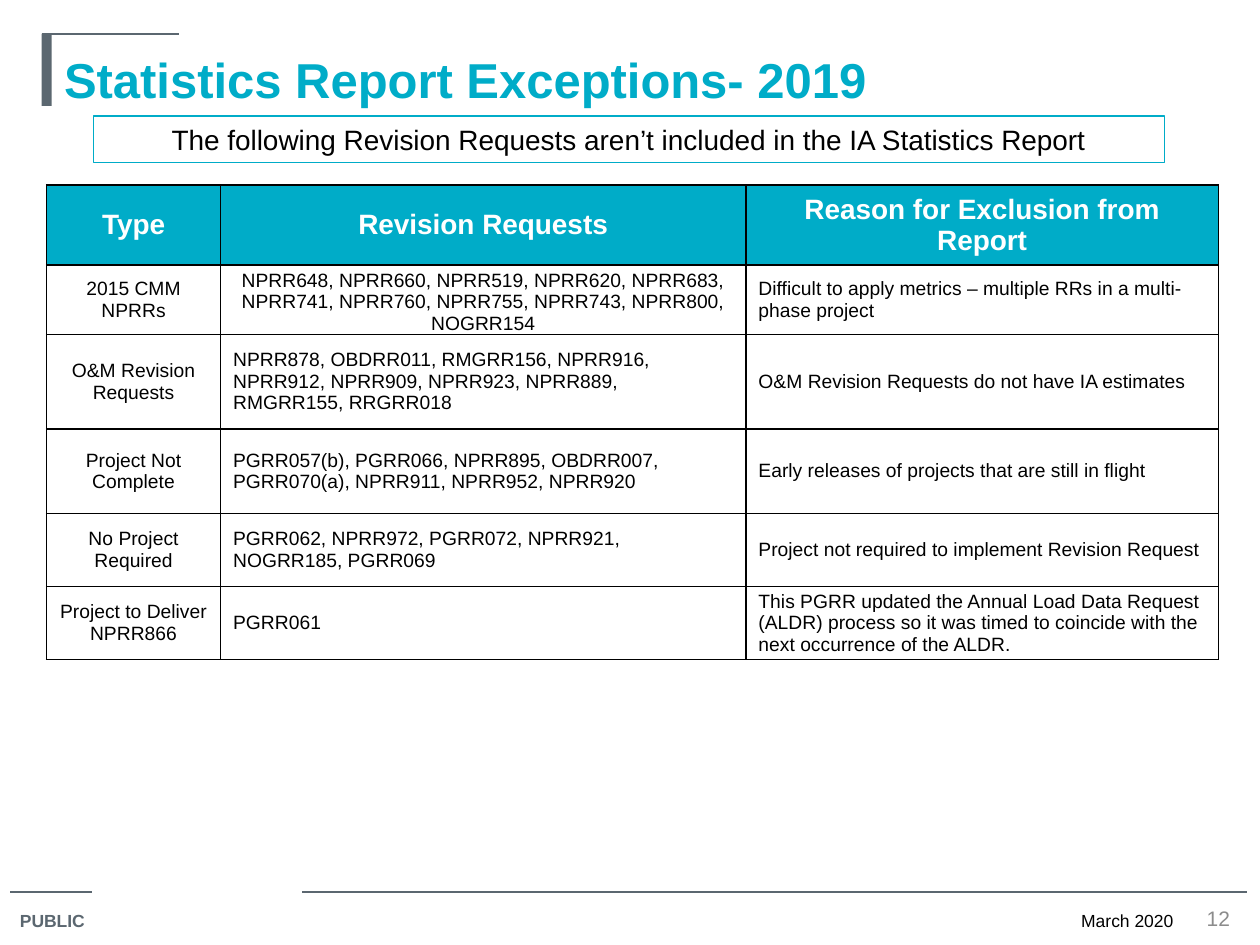
from lxml import etree
from pptx import Presentation
from pptx.dml.color import RGBColor
from pptx.enum.shapes import MSO_CONNECTOR, MSO_SHAPE
from pptx.enum.text import MSO_ANCHOR, PP_ALIGN
from pptx.oxml.ns import qn
from pptx.util import Inches, Pt

LEFT, CENTER, RIGHT = PP_ALIGN.LEFT, PP_ALIGN.CENTER, PP_ALIGN.RIGHT
TOP, MIDDLE, BOTTOM = MSO_ANCHOR.TOP, MSO_ANCHOR.MIDDLE, MSO_ANCHOR.BOTTOM
RECT, STRAIGHT = MSO_SHAPE.RECTANGLE, MSO_CONNECTOR.STRAIGHT

FONT = "Arial"
COLORS = {"teal": "00ACC8", "slate": "5B6770", "gray": "8C8C8C",
          "black": "000000", "white": "FFFFFF"}

# The slide is a grid of 100 columns by 75 rows with square units.
COLUMNS, ROWS = 100, 75
UNIT = Inches(10) / COLUMNS

TABLE_COLUMNS = [13.8, 41.7, 37.5]
TABLE_ROWS = [3.8, 6, 5.2, 7.5, 6.7, 5.8, 5.8]
HEADINGS = ["Type", "Revision Requests", "Reason for Exclusion from Report"]
EXCEPTIONS = [
    ["2015 CMM NPRRs",
     "NPRR648, NPRR660, NPRR519, NPRR620, NPRR683, NPRR741, NPRR760, "
     "NPRR755, NPRR743, NPRR800, NOGRR154",
     "Difficult to apply metrics – multiple RRs in a multi-phase project"],
    ["O&M Revision Requests",
     "NPRR878, OBDRR011, RMGRR156, NPRR916, NPRR912, NPRR909, NPRR923, "
     "NPRR889, RMGRR155, RRGRR018",
     "O&M Revision Requests do not have IA estimates"],
    ["Project Not Complete",
     "PGRR057(b), PGRR066, NPRR895, OBDRR007, PGRR070(a), NPRR911, "
     "NPRR952, NPRR920",
     "Early releases of projects that are still in flight"],
    ["No Project Required",
     "PGRR062, NPRR972, PGRR072, NPRR921, NOGRR185, PGRR069",
     "Project not required to implement Revision Request"],
    ["Project to Deliver NPRR866",
     "PGRR061",
     "This PGRR updated the Annual Load Data Request (ALDR) process so it "
     "was timed to coincide with the next occurrence of the ALDR."],
]


def grid(*units):
    return [round(u * UNIT) for u in units]


def rgb(name):
    return RGBColor.from_string(COLORS[name])


def write(tf, text, size, color, bold=False, align=LEFT, anchor=TOP):
    tf.text = text
    tf.word_wrap = True
    tf.vertical_anchor = anchor
    p = tf.paragraphs[0]
    p.alignment = align
    font = p.runs[0].font
    font.name, font.size, font.bold = FONT, Pt(size), bold
    font.color.rgb = rgb(color)


def add_text(slide, box, *args, **kwargs):
    write(slide.shapes.add_textbox(*grid(*box)).text_frame, *args, **kwargs)


def add_rule(slide, x, y, width):
    line = slide.shapes.add_connector(STRAIGHT, *grid(x, y, x + width, y))
    line.line.color.rgb = rgb("slate")
    line.line.width = Pt(0.75)
    etree.SubElement(line._element.spPr, qn("a:effectLst"))


def add_rect(slide, box, fill, line=None):
    sp = slide.shapes.add_shape(RECT, *grid(*box))
    sp.shadow.inherit = False
    sp.fill.solid()
    sp.fill.fore_color.rgb = rgb(fill)
    if line:
        sp.line.color.rgb = rgb(line)
        sp.line.width = Pt(0.75)
    else:
        sp.line.fill.background()
    return sp


def add_header(slide, box, title):
    x, y, w, h = box
    bar = 0.8
    add_rect(slide, (x, y, bar, 5.7), "slate")
    add_rule(slide, x, y, 10.9)
    add_text(slide, (x + bar, y + 0.6, w - bar, h - 0.6), title, 28, "teal",
             bold=True, anchor=BOTTOM)


def add_footer(slide, box, label, date, number):
    x, y, w, h = box
    gap_start, gap_end = 6.5, 23.2
    add_rule(slide, x, y, gap_start)
    add_rule(slide, x + gap_end, y, w - gap_end)
    text_y, text_h = y + 0.9, h - 0.9
    add_text(slide, (x - 0.2, text_y, 7.7, text_h), label, 10, "slate",
             bold=True)
    add_text(slide, (x + w - 18.2, text_y, 13.3, text_h), date, 10, "black",
             align=RIGHT)
    add_text(slide, (x + w - 4.8, text_y, 5, text_h - 0.4), number, 12,
             "gray", align=CENTER, anchor=MIDDLE)


def add_callout(slide, box, text):
    sp = add_rect(slide, box, "white", "teal")
    write(sp.text_frame, text, 16, "black", align=CENTER, anchor=MIDDLE)


def set_borders(cell, visible):
    """Draw the named sides (L, R, T, B) in black and hide the others."""
    tc_pr = cell._tc.get_or_add_tcPr()
    for i, side in enumerate("LRTB"):
        ln = etree.Element(qn(f"a:ln{side}"), w=str(Pt(1)))
        if side in visible:
            fill = etree.SubElement(ln, qn("a:solidFill"))
            etree.SubElement(fill, qn("a:srgbClr"), val=COLORS["black"])
        else:
            etree.SubElement(ln, qn("a:noFill"))
        tc_pr.insert(i, ln)


def set_margins(cell, side, end):
    cell.margin_left = cell.margin_right = Inches(side)
    cell.margin_top = cell.margin_bottom = Inches(end)


def add_exceptions_table(slide, box):
    """Build the table under a merged, empty band that the callout overlaps."""
    x, y, w, h = box
    frame = slide.shapes.add_table(len(TABLE_ROWS), len(TABLE_COLUMNS),
                                   *grid(x, y, w, h))
    table = frame.table
    table.first_row = table.horz_banding = False
    for column, width in zip(table.columns, TABLE_COLUMNS):
        column.width = round(w * width / sum(TABLE_COLUMNS) * UNIT)
    for row, height in zip(table.rows, TABLE_ROWS):
        row.height = round(h * height / sum(TABLE_ROWS) * UNIT)

    table.cell(0, 0).merge(table.cell(0, len(TABLE_COLUMNS) - 1))
    for cell in table.rows[0].cells:
        cell.fill.background()
        set_margins(cell, 0.1, 0)
        set_borders(cell, "B")

    for c, heading in enumerate(HEADINGS):
        cell = table.cell(1, c)
        cell.fill.solid()
        cell.fill.fore_color.rgb = rgb("teal")
        write(cell.text_frame, heading, 16, "white", bold=True, align=CENTER)
        cell.vertical_anchor = MIDDLE
        set_margins(cell, 0.1, 0.05)
        set_borders(cell, "LRTB")

    for r, texts in enumerate(EXCEPTIONS, start=2):
        for c, text in enumerate(texts):
            cell = table.cell(r, c)
            long_list = (r, c) == (2, 1)
            cell.fill.background()
            write(cell.text_frame, text, 11, "black",
                  align=CENTER if c == 0 or long_list else LEFT)
            cell.vertical_anchor = BOTTOM if long_list else MIDDLE
            set_margins(cell, 0 if long_list else 0.1, 0)
            set_borders(cell, "LRTB")


def main():
    prs = Presentation()
    prs.slide_width, prs.slide_height = grid(COLUMNS, ROWS)
    slide = prs.slides.add_slide(prs.slide_layouts[6])
    add_footer(slide, (0.8, 70.8, 98.2, 3.6), "PUBLIC", "March 2020", "12")
    add_header(slide, (3.3, 2.7, 66.7, 6.4),
               "Statistics Report Exceptions- 2019")
    add_exceptions_table(slide, (3.7, 10.9, sum(TABLE_COLUMNS),
                                 sum(TABLE_ROWS)))
    add_callout(slide, (7.4, 9.2, 85, 3.7),
                "The following Revision Requests aren’t included in the "
                "IA Statistics Report")
    prs.save("out.pptx")


if __name__ == "__main__":
    main()
